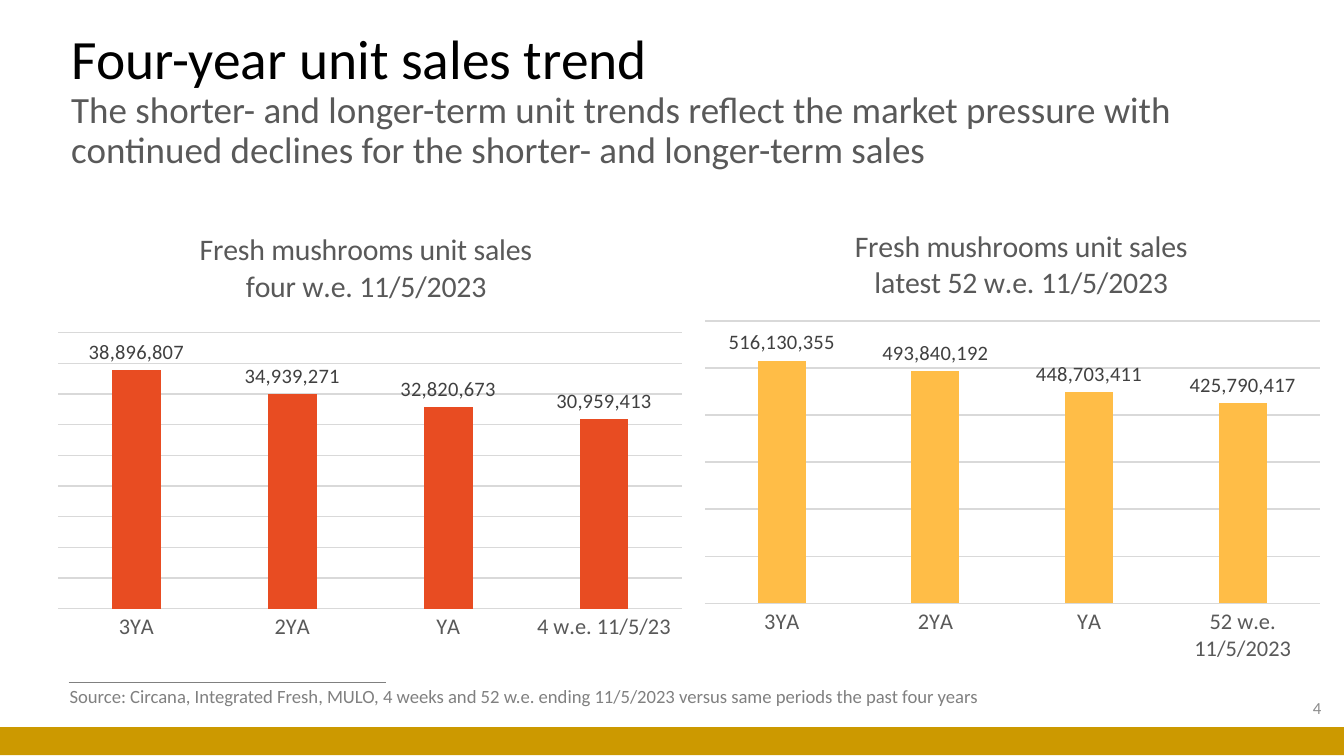
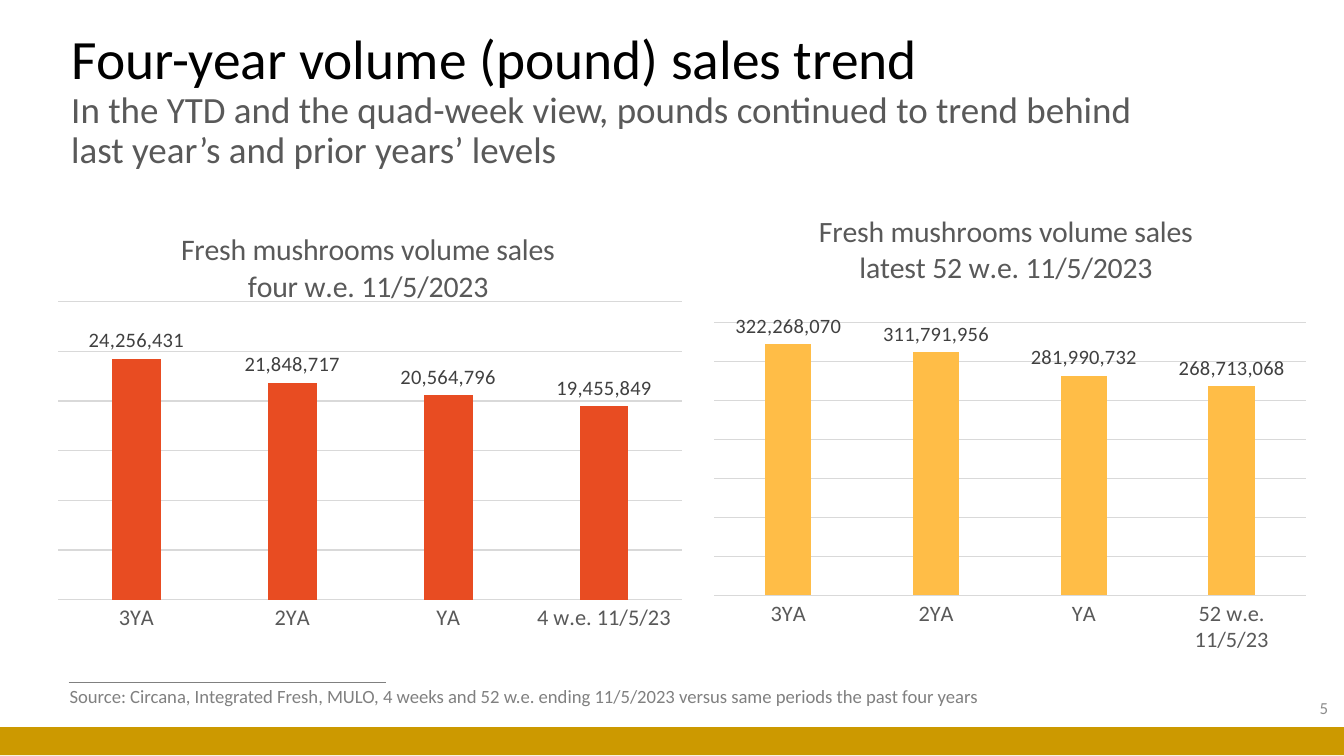
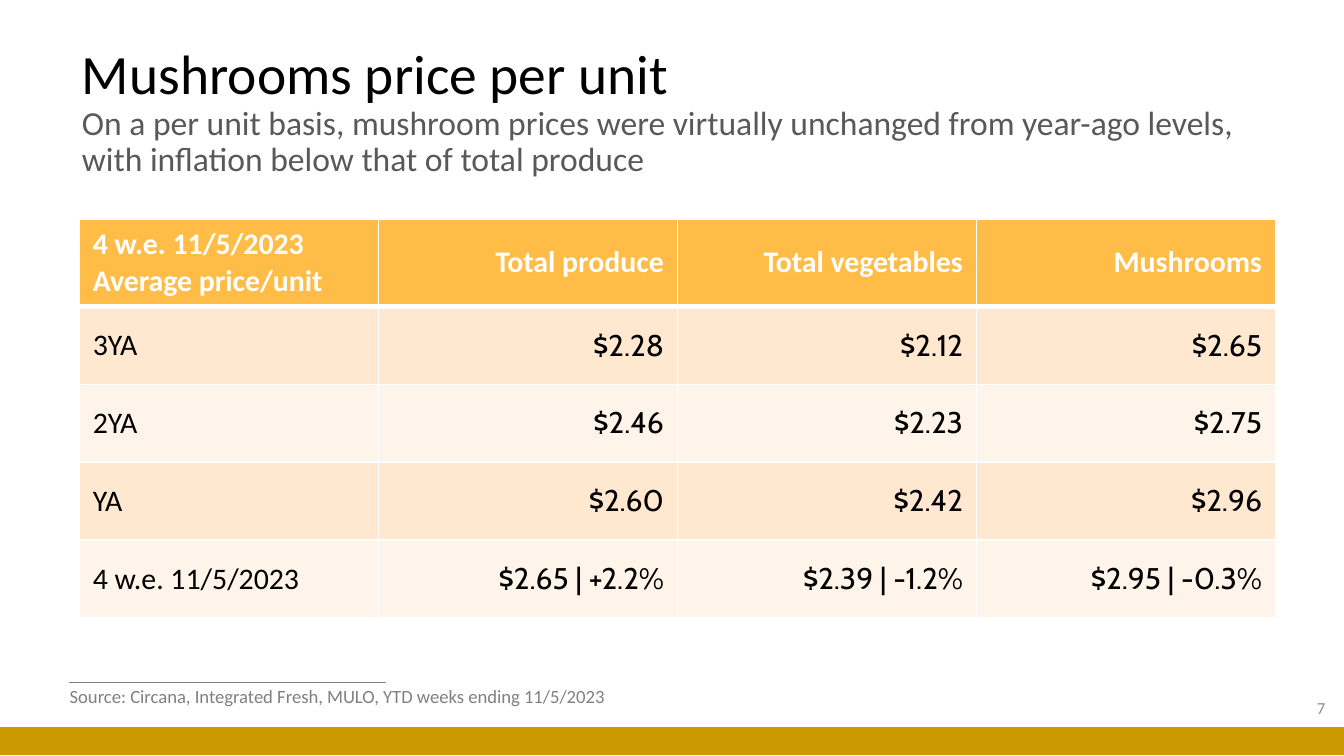
"""Build three slides on mushroom unit sales, pound sales and unit prices."""
from copy import deepcopy
from dataclasses import dataclass

from lxml import etree
from pptx import Presentation
from pptx import util as u
from pptx.chart import data as cd
from pptx.dml.color import RGBColor
from pptx.enum import chart as ch, shapes, text
from pptx.oxml import ns


@dataclass(frozen=True)
class Theme:
    font: str = "Calibri"
    figures: str = "Cabin"
    black: str = "000000"
    white: str = "FFFFFF"
    grey: str = "595959"
    label: str = "404040"
    muted: str = "808080"
    number: str = "8C8C8C"
    grid: str = "D9D9D9"
    band: str = "CC9900"
    red: str = "E84C22"
    gold: str = "FFBD47"
    stripes: tuple = ("FFE8CF", "FFF4E9")
    title_pt: float = 29.7
    subtitle_pt: float = 19.8
    small_subtitle_pt: float = 18
    head_pt: float = 16
    axis_pt: float = 12
    label_pt: float = 11
    source_pt: float = 10
    number_pt: float = 9


T = Theme()
LEFT, RIGHT = text.PP_ALIGN.LEFT, text.PP_ALIGN.RIGHT


def box(*lengths):
    return [u.Inches(n) for n in lengths]


def assign(obj, **values):
    for name, value in values.items():
        setattr(obj, name, value)


def style(font, size, color, name=T.font, bold=False):
    assign(font, size=u.Pt(size), name=name, bold=bold)
    font.color.rgb = RGBColor.from_string(color)


def stroke(line, color, width):
    line.color.rgb = RGBColor.from_string(color)
    line.width = u.Pt(width)


def paint(fill, color):
    fill.solid()
    fill.fore_color.rgb = RGBColor.from_string(color)


def set_layout(parent, after, **values):
    for old in parent.findall(ns.qn("c:layout")):
        parent.remove(old)
    layout = etree.Element(ns.qn("c:layout"))
    manual = etree.SubElement(layout, ns.qn("c:manualLayout"))
    for name, value in values.items():
        etree.SubElement(manual, ns.qn(f"c:{name}")).set("val", str(value))
    if after is None:
        parent.insert(0, layout)
    else:
        after.addnext(layout)


def set_borders(cell, **widths):
    pr = cell._tc.get_or_add_tcPr()
    for i, (side, width) in enumerate(widths.items()):
        ln = etree.Element(ns.qn(f"a:ln{side}"), w=str(u.Pt(width)))
        fill = etree.SubElement(ln, ns.qn("a:solidFill"))
        etree.SubElement(fill, ns.qn("a:srgbClr"), val=T.white)
        pr.insert(i, ln)


class Deck:
    """Hold the presentation, its theme and the current slide."""

    def __init__(self):
        self.prs = Presentation()
        assign(self.prs, slide_width=u.Inches(10),
               slide_height=u.Inches(10 * 9 / 16))

    def slide(self, title, subtitle, place, number, number_left, source,
              source_width=7.1, subtitle_pt=T.subtitle_pt):
        self.s = self.prs.slides.add_slide(self.prs.slide_layouts[5])
        self.rule()
        self.band()
        self.title(title, subtitle, place, subtitle_pt)
        self.note(number, (number_left, 5.12, 2.25, 0.3), T.number_pt, T.number,
                  RIGHT, text.MSO_ANCHOR.MIDDLE, True)
        self.note(source, (0.42, 5.05, source_width, 0.27), T.source_pt,
                  T.muted, LEFT, text.MSO_ANCHOR.TOP, False)

    def rule(self):
        line = self.s.shapes.add_connector(
            shapes.MSO_CONNECTOR.STRAIGHT, *box(0.51, 5.08, 2.87, 5.08))
        stroke(line.line, T.muted, 0.5)
        etree.SubElement(line._element.spPr, ns.qn("a:effectLst"))

    def band(self):
        sp = self.s.shapes.add_shape(
            shapes.MSO_SHAPE.RECTANGLE, *box(0, 5.41, 10, 0.21))
        sp.shadow.inherit = False
        paint(sp.fill, T.band)
        sp.line.fill.background()

    def title(self, title, subtitle, place, subtitle_pt):
        sp = self.s.shapes.title
        assign(sp, **dict(zip(("left", "top", "width", "height"), box(*place))))
        tf = sp.text_frame
        assign(tf, word_wrap=True, auto_size=text.MSO_AUTO_SIZE.NONE,
               vertical_anchor=text.MSO_ANCHOR.MIDDLE)
        p = tf.paragraphs[0]
        assign(p, alignment=LEFT, line_spacing=0.9)
        r = p.add_run()
        r.text = title
        style(r.font, T.title_pt, T.black)
        p.add_line_break()
        p._p.find(ns.qn("a:br")).append(deepcopy(r._r.rPr))
        r = p.add_run()
        r.text = subtitle
        style(r.font, subtitle_pt, T.grey)

    def note(self, words, place, size, color, align, anchor, wrap):
        tf = self.s.shapes.add_textbox(*box(*place)).text_frame
        assign(tf, word_wrap=wrap, vertical_anchor=anchor)
        p = tf.paragraphs[0]
        p.alignment = align
        r = p.add_run()
        r.text = words
        style(r.font, size, color)

    def columns(self, place, heading, last, values, color, plot_at, title_at):
        data = cd.CategoryChartData(number_format="#,##0")
        data.categories = ["3YA", "2YA", "YA", last]
        data.add_series("Series 1", values)
        chart = self.s.shapes.add_chart(
            ch.XL_CHART_TYPE.COLUMN_CLUSTERED, *box(*place), data).chart
        style(chart.font, T.source_pt, T.black)
        chart.has_legend = False
        self.chart_title(chart, heading, title_at)
        self.axes(chart)
        plot = chart.plots[0]
        assign(plot, gap_width=219, overlap=-27, vary_by_categories=False)
        series = plot.series[0]
        paint(series.format.fill, color)
        labels = series.data_labels
        assign(labels, show_value=True, number_format="#,##0",
               number_format_is_linked=False,
               position=ch.XL_LABEL_POSITION.OUTSIDE_END)
        style(labels.font, T.label_pt, T.label)
        x, y, w, h = plot_at
        set_layout(chart._chartSpace.chart.plotArea, None, layoutTarget="inner",
                   xMode="edge", yMode="edge", x=x, y=y, w=w, h=h)

    def chart_title(self, chart, heading, title_at):
        tf = chart.chart_title.text_frame
        tf.text = heading
        for p in tf.paragraphs:
            for r in p.runs:
                style(r.font, T.head_pt, T.grey)
        el = chart.chart_title._element
        set_layout(el, el.find(ns.qn("c:tx")), xMode="edge", yMode="edge",
                   x=title_at[0], y=title_at[1])

    def axes(self, chart):
        axis = chart.category_axis
        assign(axis, major_tick_mark=ch.XL_TICK_MARK.NONE,
               minor_tick_mark=ch.XL_TICK_MARK.NONE)
        style(axis.tick_labels.font, T.axis_pt, T.grey)
        stroke(axis.format.line, T.grid, 0.75)
        axis = chart.value_axis
        assign(axis, visible=False, minimum_scale=0, has_major_gridlines=True)
        stroke(axis.major_gridlines.format.line, T.grid, 0.75)

    def table(self, place, rows, head_height, row_height):
        tbl = self.s.shapes.add_table(len(rows), len(rows[0]), *box(*place)).table
        for col in tbl.columns:
            col.width = u.Inches(place[2] / len(rows[0]))
        for i, row in enumerate(rows):
            tbl.rows[i].height = u.Inches(row_height if i else head_height)
            for j, words in enumerate(row):
                self.cell(tbl.cell(i, j), words, i, j)

    def cell(self, cell, words, i, j):
        cell.text = words
        cell.vertical_anchor = text.MSO_ANCHOR.MIDDLE
        paint(cell.fill, T.stripes[(i - 1) % 2] if i else T.gold)
        set_borders(cell, L=1, R=1, T=3 if i == 1 else 1, B=1 if i else 3)
        for p in cell.text_frame.paragraphs:
            p.alignment = RIGHT if j else LEFT
            for r in p.runs:
                style(r.font, T.head_pt, T.black if i else T.white,
                      T.figures if i and j else T.font, not i)


def main():
    deck = Deck()
    four_years = ("Source: Circana, Integrated Fresh, MULO, 4 weeks and 52 w.e. "
                  "ending 11/5/2023 versus same periods the past four years")
    left_chart = (0.43, 1.55, 4.65, 3.31)

    deck.slide("Four-year unit sales trend",
               "The shorter- and longer-term unit trends reflect the market "
               "pressure with continued declines for the shorter- and "
               "longer-term sales",
               (0.43, 0.36, 9.06, 0.79), "4", 7.68, four_years)
    deck.columns(left_chart, "Fresh mushrooms unit sales\nfour w.e. 11/5/2023",
                 "4 w.e. 11/5/23", (38896807, 34939271, 32820673, 30959413),
                 T.red, (0, 0.28, 1, 0.62), (0.22, 0.04))
    deck.columns((5.24, 1.55, 4.72, 3.5),
                 "Fresh mushrooms unit sales\nlatest 52 w.e. 11/5/2023",
                 "52 w.e. 11/5/2023",
                 (516130355, 493840192, 448703411, 425790417),
                 T.gold, (0, 0.24, 0.97, 0.6), (0.23, 0.03))

    deck.slide("Four-year volume (pound) sales trend",
               "In the YTD and the quad-week view, pounds continued to trend "
               "behind last year’s and prior years’ levels",
               (0.43, 0.36, 8.35, 0.79), "5", 7.73, four_years)
    deck.columns(left_chart, "Fresh mushrooms volume sales\nfour w.e. 11/5/2023",
                 "4 w.e. 11/5/23", (24256431, 21848717, 20564796, 19455849),
                 T.red, (0, 0.21, 1, 0.67), (0.19, 0.04))
    deck.columns((5.31, 1.55, 4.41, 3.31),
                 "Fresh mushrooms volume sales\nlatest 52 w.e. 11/5/2023",
                 "52 w.e. 11/5/23",
                 (322268070, 311791956, 281990732, 268713068),
                 T.gold, (0, 0.26, 1, 0.62), (0.17, 0))

    deck.slide("Mushrooms price per unit",
               "On a per unit basis, mushroom prices were virtually unchanged "
               "from year-ago levels, with inflation below that of total produce",
               (0.51, 0.57, 9.06, 0.54), "7", 7.71,
               "Source: Circana, Integrated Fresh, MULO, YTD weeks ending 11/5/2023",
               4.31, T.small_subtitle_pt)
    deck.table((0.59, 1.63, 8.9, 2.97), [
        ("4 w.e. 11/5/2023\nAverage price/unit", "Total produce",
         "Total vegetables", "Mushrooms"),
        ("3YA", "$2.28", "$2.12", "$2.65"),
        ("2YA", "$2.46", "$2.23", "$2.75"),
        ("YA", "$2.60", "$2.42", "$2.96"),
        ("4 w.e. 11/5/2023", "$2.65 | +2.2%", "$2.39 | -1.2%", "$2.95 | -0.3%"),
    ], 0.65, 0.58)

    deck.prs.save("out.pptx")


if __name__ == "__main__":
    main()
